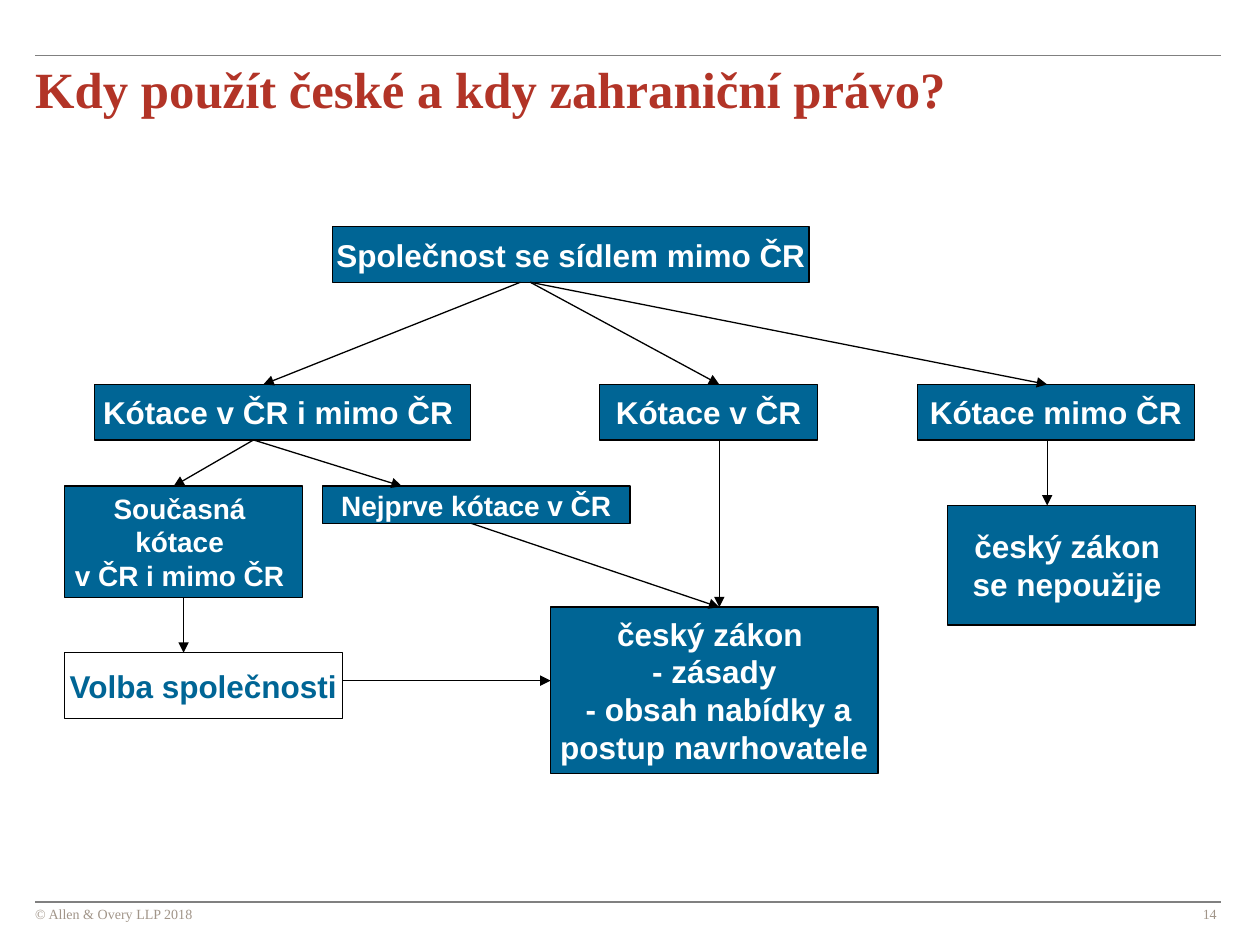
from lxml import etree
from pptx import Presentation
from pptx import util as u
from pptx.dml.color import RGBColor
from pptx.enum import shapes, text
from pptx.oxml.ns import qn

BLUE, WHITE, BLACK = "006595", "FFFFFF", "000000"
RED, GREY, TAUPE = "B23427", "808080", "A19589"
SANS, SERIF = "Arial", "Times New Roman"
LEFT, RIGHT = 0.71, 24.61
ROW_TOP, ROW_BOTTOM, BOX_HEIGHT = 7.75, 8.87, 1.12
SUB_TOP = 9.8
CZECH_X, ABROAD_X = 14.5, 21.11


def color(value):
    """Turn a hex string into a colour."""
    return RGBColor.from_string(value)


def lengths(*values):
    """Turn centimetres into lengths."""
    return [u.Cm(value) for value in values]


def format_text(text_frame, font, size, font_color, bold, alignment):
    """Format every paragraph and run of a text frame."""
    for paragraph in text_frame.paragraphs:
        paragraph.alignment = alignment
        for run in paragraph.runs:
            run.font.name = font
            run.font.size = u.Pt(size)
            run.font.bold = bold
            run.font.color.rgb = color(font_color)


def clear_margins(text_frame):
    """Remove the insets and place the text at the top."""
    text_frame.margin_left = text_frame.margin_right = 0
    text_frame.margin_top = text_frame.margin_bottom = 0
    text_frame.vertical_anchor = text.MSO_ANCHOR.TOP
    text_frame.word_wrap = True


def add_title(slide, wording):
    """Place and format the title placeholder."""
    title = slide.shapes.title
    title.left, title.top, title.width, title.height = lengths(LEFT, 1.17, 23.8, 1.24)
    title.text_frame.text = wording
    clear_margins(title.text_frame)
    format_text(title.text_frame, SERIF, 29, RED, True, text.PP_ALIGN.LEFT)


def add_footer(slide, wording, left, alignment):
    """Add a small text at the foot of the slide."""
    footer = slide.shapes.add_textbox(*lengths(left, 18.26, 18.21, 0.33))
    footer.text_frame.text = wording
    clear_margins(footer.text_frame)
    format_text(footer.text_frame, SERIF, 8, TAUPE, False, alignment)


def add_line(slide, start, end, line_color=BLACK, width=0.75):
    """Add a straight line without a shadow."""
    line = slide.shapes.add_connector(
        shapes.MSO_CONNECTOR.STRAIGHT, *lengths(*start, *end))
    line.line.color.rgb = color(line_color)
    line.line.width = u.Pt(width)
    etree.SubElement(line._element.spPr, qn("a:effectLst"))
    return line


def add_arrow(slide, start, end):
    """Add a line with a triangle at its end."""
    arrow = add_line(slide, start, end)
    etree.SubElement(arrow.line._get_or_add_ln(), qn("a:tailEnd"), type="triangle")
    return arrow


def add_box(slide, wording, place, size=18, fill=BLUE, font_color=WHITE):
    """Add a bordered rectangle with centred bold text."""
    box = slide.shapes.add_shape(shapes.MSO_SHAPE.RECTANGLE, *lengths(*place))
    box.shadow.inherit = False
    box.fill.solid()
    box.fill.fore_color.rgb = color(fill)
    box.line.color.rgb = color(BLACK)
    box.line.width = u.Pt(0.75)
    box.text_frame.text = wording
    box.text_frame.word_wrap = False
    box.text_frame.vertical_anchor = text.MSO_ANCHOR.MIDDLE
    format_text(box.text_frame, SANS, size, font_color, True, text.PP_ALIGN.CENTER)
    return box


def add_boxes(slide):
    """Add the boxes and return the one for the present listing."""
    add_box(slide, "Společnost se sídlem mimo ČR", (6.71, 4.57, 9.6, BOX_HEIGHT))
    for wording, left, width in (
        ("Kótace v ČR i mimo ČR ", 1.9, 7.59),
        ("Kótace v ČR", 12.09, 4.39),
        ("Kótace mimo ČR", 18.49, 5.59),
    ):
        add_box(slide, wording, (left, ROW_TOP, width, BOX_HEIGHT))
    add_box(slide, "Nejprve kótace v ČR", (6.5, SUB_TOP, 6.2, 0.76), size=16)
    add_box(slide, "český zákon \nse nepoužije ", (19.1, 10.19, 5, 2.41))
    add_box(slide, "český zákon \n - zásady \n - obsah nabídky a\n postup navrhovatele ",
            (11.1, 12.24, 6.6, 3.35))
    add_box(slide, "Volba společnosti", (1.3, 13.16, 5.6, 1.32),
            fill=WHITE, font_color=BLUE)
    return add_box(slide, "Současná \nkótace \nv ČR i mimo ČR ",
                   (1.3, SUB_TOP, 4.8, 2.24), size=16)


def add_arrows(slide, present_listing):
    """Add the arrows between the boxes."""
    for start, end in (
        ((10.69, 5.69), (CZECH_X, ROW_TOP)),
        ((10.69, 5.69), (ABROAD_X, ROW_TOP)),
        ((10.49, 5.69), (5.31, ROW_TOP)),
        ((5.11, ROW_BOTTOM), (3.5, SUB_TOP)),
        ((5.11, ROW_BOTTOM), (8.1, SUB_TOP)),
        ((ABROAD_X, ROW_BOTTOM), (ABROAD_X, 10.19)),
        ((CZECH_X, ROW_BOTTOM), (CZECH_X, 12.24)),
        ((9.5, 10.55), (CZECH_X, 12.24)),
        ((6.9, 13.72), (11.1, 13.72)),
    ):
        add_arrow(slide, start, end)
    choice_arrow = add_arrow(slide, (3.7, 12.04), (3.7, 13.16))
    choice_arrow.begin_connect(present_listing, 2)


def main():
    """Build and save the presentation."""
    presentation = Presentation()
    presentation.slide_width, presentation.slide_height = lengths(25.4, 19.05)
    slide = presentation.slides.add_slide(presentation.slide_layouts[5])
    for top in (1.12, 18.19):
        add_line(slide, (LEFT, top), (RIGHT, top), GREY, 1)
    add_footer(slide, "© Allen & Overy LLP 2018", LEFT, text.PP_ALIGN.LEFT)
    add_footer(slide, "14", 6.32, text.PP_ALIGN.RIGHT)
    add_title(slide, "Kdy použít české a kdy zahraniční právo?")
    add_arrows(slide, add_boxes(slide))
    presentation.save("out.pptx")


if __name__ == "__main__":
    main()
